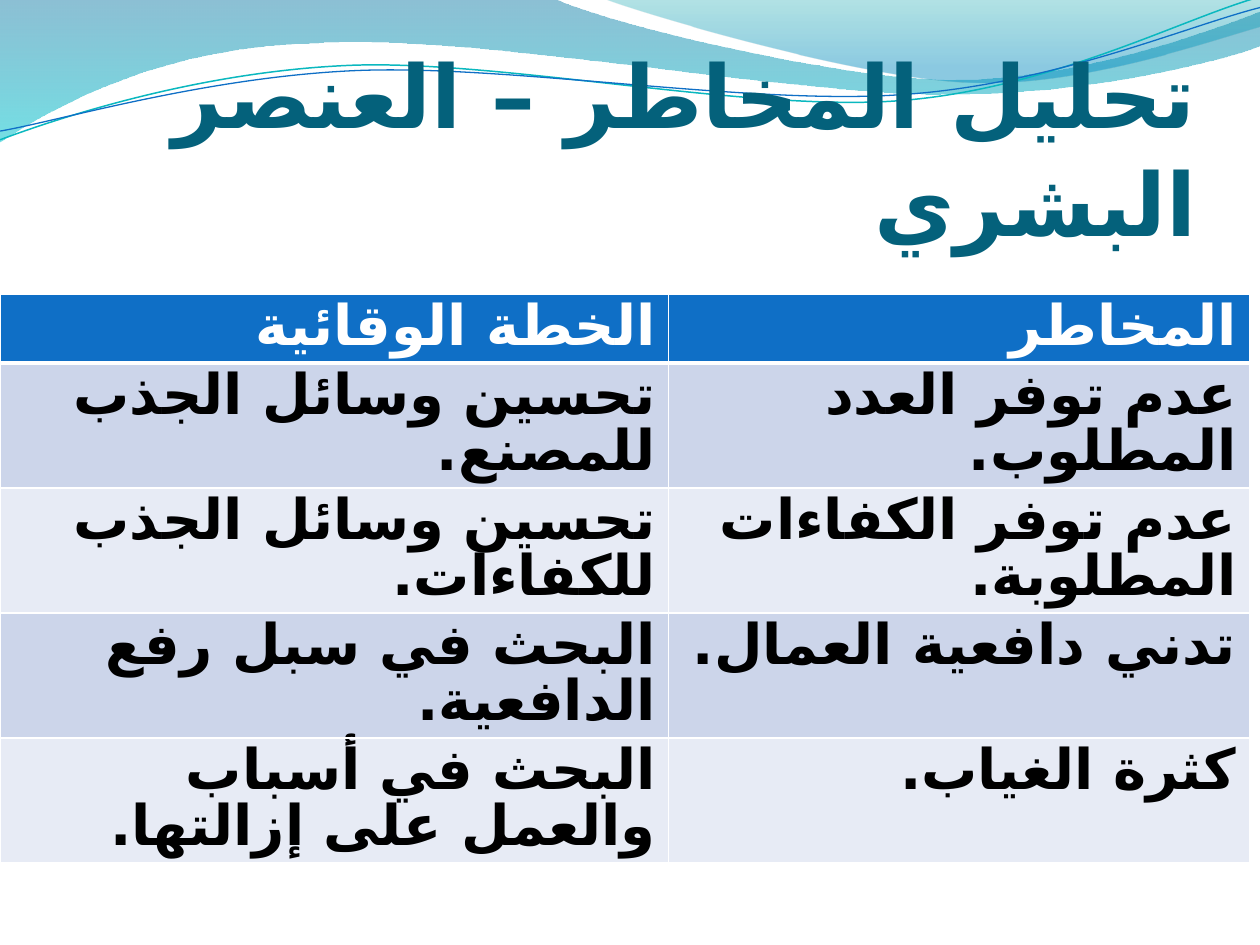
from lxml import etree
from pptx import Presentation
from pptx.dml.color import RGBColor
from pptx.enum import text
from pptx.oxml.ns import qn
from pptx.util import Pt

BLUE = RGBColor(0x0F, 0x6F, 0xC6)
TEAL = RGBColor(0x0A, 0xB8, 0xBF)
DARK = RGBColor(0x04, 0x61, 0x7B)
WHITE = RGBColor(0xFF, 0xFF, 0xFF)
BLACK = RGBColor(0, 0, 0)
BANDS = [RGBColor(0xCC, 0xD5, 0xEA), RGBColor(0xE7, 0xEB, 0xF5)]
DEEP, AQUA = RGBColor(0x00, 0x74, 0xA1), RGBColor(0x00, 0xC6, 0xCF)
SEA, SKY = RGBColor(0x00, 0xA1, 0xA9), RGBColor(0x00, 0x8B, 0xBF)
ARABIC = "DejaVu Sans"


def bend(wave, parts):
    """Turn each straight segment whose part has control points into a Bezier curve."""
    for seg, part in zip(list(wave._element.iter(qn("a:lnTo"))), parts):
        if len(part) == 2:
            continue
        curve = etree.Element(qn("a:cubicBezTo"))
        for x, y in (part[:2], part[2:4]):
            pt = etree.SubElement(curve, qn("a:pt"))
            pt.set("x", str(Pt(x) - wave.left))
            pt.set("y", str(Pt(y) - wave.top))
        curve.append(seg[0])
        seg.getparent().replace(seg, curve)


def style(par, font, size, color, space):
    """Format a right-to-left paragraph, with a font for the Arabic letters."""
    par.alignment = text.PP_ALIGN.RIGHT
    par.line_spacing = space
    par._p.get_or_add_pPr().set("rtl", "1")
    for run in par.runs:
        run.font.name, run.font.size, run.font.bold = font, Pt(size), True
        run.font.color.rgb = color
        etree.SubElement(run._r.rPr, qn("a:cs")).set("typeface", ARABIC)


prs = Presentation()
prs.slide_width, prs.slide_height = Pt(720), Pt(540)
slide = prs.slides.add_slide(prs.slide_layouts[5])

# Waves along the top, in points: start, parts, gradient stops or line
waves = [
    ((0, 0), [(316.8, -0.7), (342.7, 12.2, 478, 45.4, 545.8, 45.4),
              (614.2, 45.4, 689.8, 18.7, 720, 6.5), (720.7, 25.9),
              (707.8, 31.7, 626.4, 54.7, 537.1, 54),
              (447.8, 54, 275, 20.2, 185, 24.5),
              (92.9, 25.9, 33.1, 59.8, -0.7, 81.4)],
     [(0, DEEP, 45), (1, AQUA, 55)]),
    ((344.9, -0.7), [(366.5, 7.9, 491, 44.6, 553.7, 46.8),
                     (616.3, 49.7, 691.9, 23, 720, 15.1), (720, 0)],
     [(0, SEA, 30), (0.8, SKY, 45)]),
    ((0, 79.9), [(34.6, 67, 113.8, 41, 199.4, 37.4),
                 (284.4, 33.8, 427, 64.1, 513.4, 57.6),
                 (599.8, 51.1, 675.4, 10.8, 718.6, -1.4)], (TEAL, 0.85)),
    ((0, 74.9), [(33.8, 69.1, 118.1, 43.9, 203.8, 40.3),
                 (290.2, 36.7, 430, 60.5, 516.2, 54),
                 (601.9, 48.2, 677.5, 15.1, 720, 4.3)], (BLUE, 0.75)),
]
for start, parts, look in waves:
    filled = isinstance(look, list)
    pen = slide.shapes.build_freeform(Pt(start[0]), Pt(start[1]))
    pen.add_line_segments([(Pt(p[-2]), Pt(p[-1])) for p in parts], close=filled)
    wave = pen.convert_to_shape()
    bend(wave, parts)
    wave.shadow.inherit = False
    if filled:
        wave.line.fill.background()
        wave.fill.gradient()
        wave.fill.gradient_angle = 270
        for stop, (pos, color, _) in zip(wave.fill.gradient_stops, look):
            stop.position, stop.color.rgb = pos, color
        clrs = wave._element.spPr.iter(qn("a:srgbClr"))
        for clr, (_, _, alpha) in zip(clrs, look):
            etree.SubElement(clr, qn("a:alpha")).set("val", str(alpha * 1000))
    else:
        wave.fill.background()
        wave.line.color.rgb, wave.line.width = look[0], Pt(look[1])

# Title, moved in front of the waves
title = slide.shapes.title
slide.shapes._spTree.append(title._element)
title.left, title.top, title.width, title.height = Pt(36), Pt(55.4), Pt(648), Pt(90)
frame = title.text_frame
frame.text = "تحليل المخاطر – العنصر البشري "
frame.auto_size = text.MSO_AUTO_SIZE.NONE
frame.vertical_anchor = text.MSO_ANCHOR.BOTTOM
frame.margin_left = frame.margin_right = frame.margin_bottom = 0
frame.margin_top = Pt(3.6)
style(frame.paragraphs[0], "Calibri", 50, DARK, 1.03)

# Risk table
rows = [
    ("الخطة الوقائية", "المخاطر"),
    ("تحسين وسائل الجذب للمصنع.", "عدم توفر العدد المطلوب."),
    ("تحسين وسائل الجذب للكفاءات.", "عدم توفر الكفاءات المطلوبة."),
    ("البحث في سبل رفع الدافعية.", "تدني دافعية العمال."),
    ("البحث في أسباب والعمل على إزالتها.", "كثرة الغياب. "),
]
table = slide.shapes.add_table(len(rows), 2, Pt(0), Pt(168), Pt(714), Pt(146)).table
table.columns[0].width, table.columns[1].width = Pt(382), Pt(332)
for r, row in enumerate(rows):
    table.rows[r].height = Pt(29.2)
    for c, words in enumerate(row):
        cell = table.cell(r, c)
        cell.text_frame.text = words
        cell.fill.solid()
        cell.fill.fore_color.rgb = BANDS[(r - 1) % 2] if r else BLUE
        style(cell.text_frame.paragraphs[0], "Vollkorn", 32,
              BLACK if r else WHITE, 0.86)
        if r == 0:
            edge = etree.Element(qn("a:lnB"), w=str(Pt(3)))
            fill = etree.SubElement(edge, qn("a:solidFill"))
            etree.SubElement(fill, qn("a:srgbClr")).set("val", str(WHITE))
            cell._tc.tcPr.insert(0, edge)

prs.save("out.pptx")
